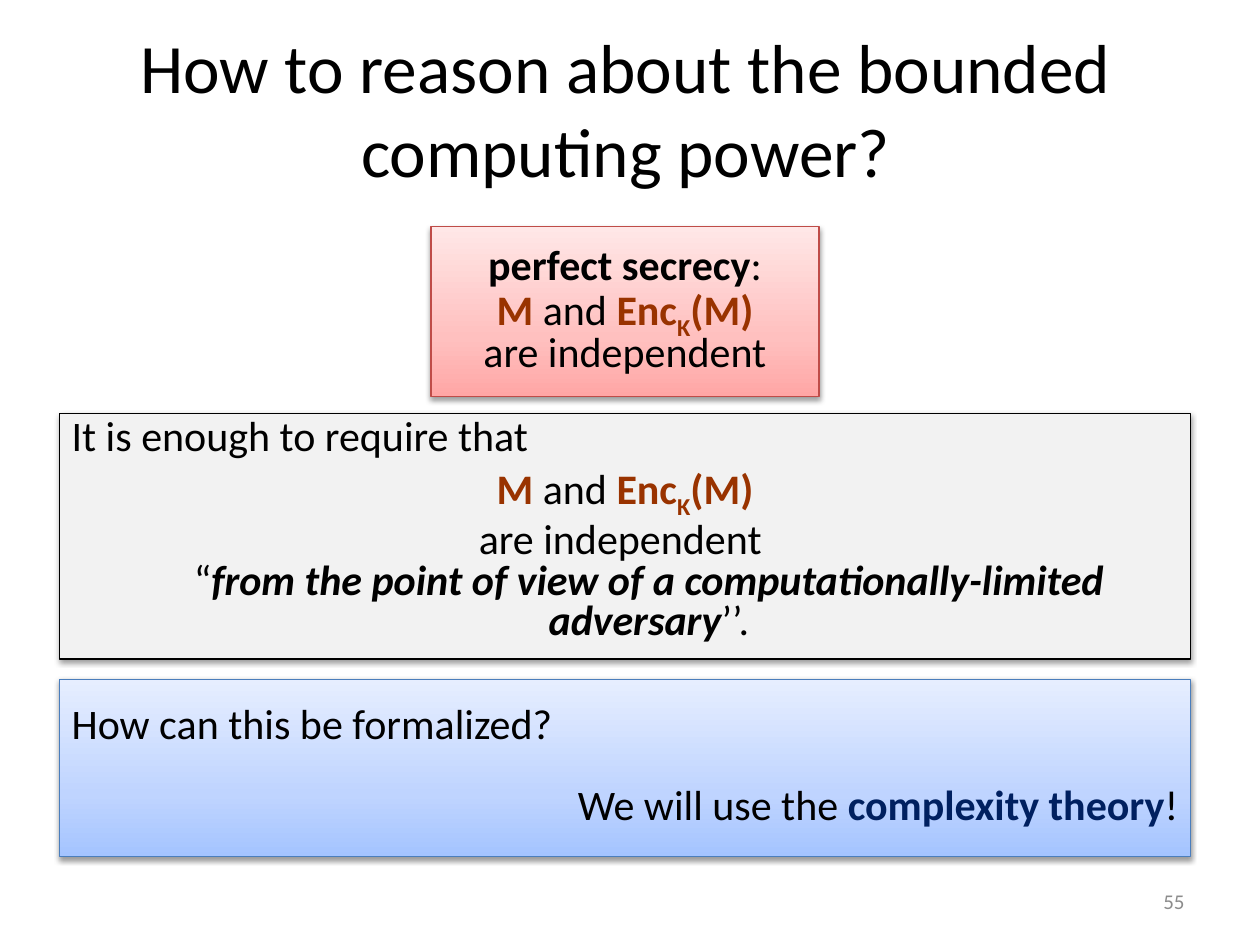
import copy
import dataclasses

import lxml.etree
import pptx
import pptx.dml.color
import pptx.enum.shapes
import pptx.enum.text
import pptx.oxml.ns
import pptx.util

ALIGN = pptx.enum.text.PP_ALIGN
ANCHOR = pptx.enum.text.MSO_ANCHOR
qn = pptx.oxml.ns.qn


@dataclasses.dataclass(frozen=True)
class Theme:
    """Colours, font and type sizes of the slide."""
    font: str = "Calibri"
    title: float = 39.6
    body: float = 24
    small: float = 12
    ink: str = "000000"
    rust: str = "993300"
    navy: str = "002060"
    muted: str = "8C8C8C"
    gray: tuple = ("F2F2F2",)
    red: tuple = ("FFA6A5", "FFC0BF", "FFE7E7")
    red_line: str = "BF4C48"
    blue: tuple = ("A4C4FF", "BFD4FF", "E6EEFF")
    blue_line: str = "4B7EBC"
    stops: tuple = (0, 0.35, 1)


T = Theme()
WIDTH, HEIGHT = pptx.util.Inches(10), pptx.util.Inches(7.5)
LEFT, FULL = 4.7, 89.8
MESSAGE = [("M", T.rust, "b"), (" and ",), ("Enc", T.rust, "b"),
           ("K", T.rust, "b_"), ("(M)", T.rust, "b")]


def rgb(value):
    """Turn a hex string into a colour."""
    return pptx.dml.color.RGBColor.from_string(value)


def area(x, y, w, h):
    """Turn percentages of the slide into left, top, width and height."""
    return [int(v * side / 100) for v, side in zip((x, y, w, h), (WIDTH, HEIGHT) * 2)]


def add_run(p, text, color=T.ink, style="", size=T.body):
    """Add a run; style letters are b bold, i italic, _ subscript."""
    r = p.add_run()
    r.text = text
    r.font.name, r.font.size = T.font, pptx.util.Pt(size)
    r.font.color.rgb = rgb(color)
    r.font.bold, r.font.italic = "b" in style, "i" in style
    if "_" in style:
        r.font._element.set("baseline", "-25000")


def fill_text(tf, paragraphs, anchor=ANCHOR.MIDDLE, before=0, hanging=0):
    """Write (alignment, runs) paragraphs, with None as a line break."""
    tf.word_wrap, tf.vertical_anchor = True, anchor
    for i, (align, runs) in enumerate(paragraphs):
        p = tf.add_paragraph() if i else tf.paragraphs[0]
        p.alignment, p.line_spacing = align, 0.8
        p.space_before = pptx.util.Pt(before)
        if hanging:
            indent = pptx.util.Inches(hanging)
            p._p.get_or_add_pPr().set("marL", str(indent))
            p._p.get_or_add_pPr().set("indent", str(-indent))
        for run in runs:
            if run is None:
                p.add_line_break()
            else:
                add_run(p, *run)


def add_shadow(s):
    """Give a shape a soft shadow straight below it."""
    s.shadow.inherit = False
    effects = s._element.spPr.find(qn("a:effectLst"))
    shadow = lxml.etree.SubElement(
        effects, qn("a:outerShdw"), blurRad=str(pptx.util.Pt(3.1)),
        dist=str(pptx.util.Pt(1.6)), dir="5400000", rotWithShape="0")
    color = lxml.etree.SubElement(shadow, qn("a:srgbClr"), val=T.ink)
    lxml.etree.SubElement(color, qn("a:alpha"), val="38000")


def add_panel(slide, box, colors, line):
    """Add a shadowed rectangle with a plain or rising gradient fill."""
    s = slide.shapes.add_shape(pptx.enum.shapes.MSO_SHAPE.RECTANGLE, *area(*box))
    if len(colors) == 1:
        s.fill.solid()
        s.fill.fore_color.rgb = rgb(colors[0])
    else:
        s.fill.gradient()
        s.fill.gradient_angle = 90
        stops = s._element.spPr.find(".//" + qn("a:gsLst"))
        stops.append(copy.deepcopy(stops[0]))
        for stop, place, color in zip(s.fill.gradient_stops, T.stops, colors):
            stop.position, stop.color.rgb = place, rgb(color)
    s.line.color.rgb, s.line.width = rgb(line), pptx.util.Pt(0.75)
    add_shadow(s)
    return s.text_frame


def set_title(slide, text):
    """Place and write the title."""
    s = slide.shapes.title
    s.left, s.top, s.width, s.height = area(5.5, 3.07, 88.3, 16.67)
    tf = s.text_frame
    tf.auto_size = pptx.enum.text.MSO_AUTO_SIZE.NONE
    tf.vertical_anchor = ANCHOR.MIDDLE
    p = tf.paragraphs[0]
    p.alignment = ALIGN.CENTER
    add_run(p, text, size=T.title)


def add_number(slide, text):
    """Write the page number."""
    tf = slide.shapes.add_textbox(*area(71.7, 92.67, 23.3, 5.33)).text_frame
    tf.vertical_anchor, tf.word_wrap = ANCHOR.MIDDLE, True
    p = tf.paragraphs[0]
    p.alignment = ALIGN.RIGHT
    add_run(p, text, T.muted, size=T.small)


def main():
    """Build the slide and save it."""
    prs = pptx.Presentation()
    prs.slide_width, prs.slide_height = WIDTH, HEIGHT
    slide = prs.slides.add_slide(prs.slide_layouts[5])
    set_title(slide, "How to reason about the bounded computing power?")

    secrecy = add_panel(slide, (34.2, 24, 30.8, 18), T.red, T.red_line)
    fill_text(secrecy, [
        (ALIGN.CENTER, [("perfect secrecy", T.ink, "b"), (":",)]),
        (ALIGN.CENTER, MESSAGE),
        (ALIGN.CENTER, [("are independent",)])])

    requirement = add_panel(slide, (LEFT, 43.73, FULL, 26), T.gray, T.ink)
    fill_text(requirement, [
        (ALIGN.LEFT, [("It is enough to require that",)]),
        (ALIGN.CENTER, MESSAGE),
        (ALIGN.CENTER, [
            ("are independent ",), None, ("“",),
            ("from the point of view of a computationally-limited adversary", T.ink, "bi"),
            ("’’.",)])], ANCHOR.TOP, before=T.body * 0.2, hanging=0.38)

    question = add_panel(slide, (LEFT, 71.87, FULL, 18.8), T.blue, T.blue_line)
    fill_text(question, [
        (ALIGN.LEFT, [("How can this be formalized?",)]),
        (ALIGN.RIGHT, [("We will use the ",), ("complexity theory", T.navy, "b"), ("!",)])])
    question.paragraphs[1].space_before = pptx.util.Pt(23.4)

    add_number(slide, "55")
    prs.save("out.pptx")


if __name__ == "__main__":
    main()
